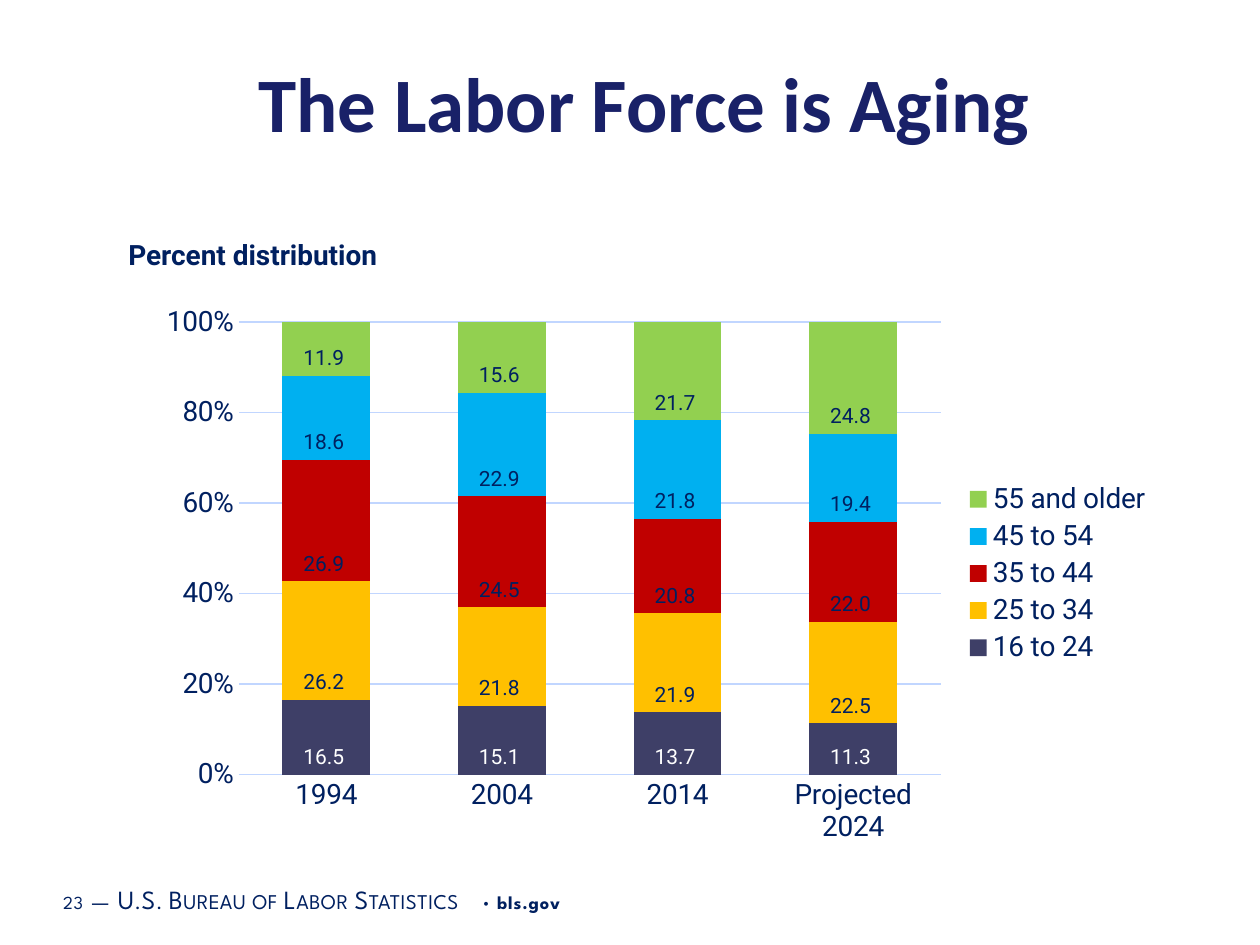
"""Build the slide on the aging labor force with its stacked column chart."""
from dataclasses import dataclass

import lxml.etree
import pptx
import pptx.chart.data
import pptx.dml.color
import pptx.enum.chart
import pptx.enum.text
import pptx.oxml
import pptx.oxml.ns
import pptx.util

SCALE = 914400 / 126


@dataclass(frozen=True)
class Theme:
    navy: str = "002060"
    title: str = "192168"
    grid: str = "C1D6FF"
    white: str = "FFFFFF"
    head: str = "Calibri"
    body: str = "Roboto"
    foot: str = "League Spartan"
    big: float = 44
    mid: float = 16
    caps: float = 15
    label: float = 12
    small: float = 10.5


@dataclass(frozen=True)
class Box:
    left: int
    top: int
    width: int
    height: int

    def emu(self) -> list[int]:
        return [px(n) for n in (self.left, self.top, self.width, self.height)]


@dataclass(frozen=True)
class Group:
    name: str
    values: tuple[float, ...]
    fill: str
    ink: str = Theme.navy


@dataclass(frozen=True)
class Part:
    text: str
    size: float
    track: float = 0.5
    caps: bool = False
    bold: bool = False


THEME = Theme()
YEARS = ("1994", "2004", "2014", "Projected 2024")
GROUPS = (
    Group("16 to 24", (16.5, 15.1, 13.7, 11.3), "3E3F67", THEME.white),
    Group("25 to 34", (26.2, 21.8, 21.9, 22.5), "FFC000"),
    Group("35 to 44", (26.9, 24.5, 20.8, 22.0), "C00000"),
    Group("45 to 54", (18.6, 22.9, 21.8, 19.4), "00B0F0"),
    Group("55 and older", (11.9, 15.6, 21.7, 24.8), "92D050"),
)
FOOTER = (
    Part("23", THEME.small),
    Part(" ", THEME.mid),
    Part("—", THEME.caps, 0.3, caps=True),
    Part(" ", THEME.mid),
    Part("U.S. Bureau of Labor Statistics", THEME.caps, 0.3, caps=True),
    Part(" • ", THEME.small),
    Part("bls.gov", THEME.small, bold=True),
)


def px(count: int) -> int:
    return round(count * SCALE)


def rgb(code: str) -> pptx.dml.color.RGBColor:
    return pptx.dml.color.RGBColor.from_string(code)


def style(font, size: float, color: str = THEME.navy,
          face: str = THEME.body, bold: bool = False) -> None:
    font.size = pptx.util.Pt(size)
    font.name = face
    font.bold = bold
    font.color.rgb = rgb(color)


def write(para, text: str, *, track: float = 0, caps: bool = False, **form) -> None:
    run = para.add_run()
    run.text = text
    style(run.font, **form)
    props = run._r.get_or_add_rPr()
    if track:
        props.set("spc", str(round(track * 100)))
    if caps:
        props.set("cap", "small")


def add_box(slide, box: Box):
    frame = slide.shapes.add_textbox(*box.emu()).text_frame
    frame.word_wrap = True
    frame.vertical_anchor = pptx.enum.text.MSO_ANCHOR.MIDDLE
    return frame


def add_title(slide, box: Box, text: str) -> None:
    title = slide.shapes.title
    title.left, title.top, title.width, title.height = box.emu()
    title.text_frame.vertical_anchor = pptx.enum.text.MSO_ANCHOR.MIDDLE
    para = title.text_frame.paragraphs[0]
    para.alignment = pptx.enum.text.PP_ALIGN.CENTER
    write(para, text, size=THEME.big, color=THEME.title, face=THEME.head, bold=True)


def rule(line) -> None:
    line.color.rgb = rgb(THEME.grid)
    line.width = pptx.util.Pt(0.75)


def place_plot(chart, **shares: float) -> None:
    area = chart._chartSpace.find(".//" + pptx.oxml.ns.qn("c:plotArea"))
    for old in area.findall(pptx.oxml.ns.qn("c:layout")):
        area.remove(old)
    layout = lxml.etree.Element(pptx.oxml.ns.qn("c:layout"))
    manual = lxml.etree.SubElement(layout, pptx.oxml.ns.qn("c:manualLayout"))
    modes = {"layoutTarget": "inner", "xMode": "edge", "yMode": "edge"}
    for tag, value in (modes | shares).items():
        lxml.etree.SubElement(manual, pptx.oxml.ns.qn(f"c:{tag}"), val=str(value))
    area.insert(0, layout)


def paint(series, group: Group) -> None:
    series.format.fill.solid()
    series.format.fill.fore_color.rgb = rgb(group.fill)
    labels = series.data_labels
    labels.show_value = True
    labels.position = pptx.enum.chart.XL_LABEL_POSITION.INSIDE_BASE
    labels.number_format = "0.0_)"
    labels.number_format_is_linked = False
    style(labels.font, THEME.label, group.ink)


def add_chart(slide, box: Box) -> None:
    kinds = pptx.enum.chart
    data = pptx.chart.data.CategoryChartData(number_format="0.0_)")
    data.categories = YEARS
    for group in GROUPS:
        data.add_series(group.name, group.values)
    chart = slide.shapes.add_chart(
        kinds.XL_CHART_TYPE.COLUMN_STACKED_100, *box.emu(), data).chart
    style(chart.font, 10)
    chart.has_title = False
    chart.has_legend = True
    chart.legend.position = kinds.XL_LEGEND_POSITION.RIGHT
    chart.legend.include_in_layout = False
    style(chart.legend.font, THEME.mid)
    plot = chart.plots[0]
    plot.gap_width, plot.overlap = 100, 100
    plot.vary_by_categories = False
    for series, group in zip(plot.series, GROUPS):
        paint(series, group)
    for axis in (chart.category_axis, chart.value_axis):
        axis.major_tick_mark = axis.minor_tick_mark = kinds.XL_TICK_MARK.NONE
        style(axis.tick_labels.font, THEME.mid)
    rule(chart.category_axis.format.line)
    scale = chart.value_axis
    scale.major_unit = 0.2
    scale.tick_labels.number_format = "0%"
    scale.tick_labels.number_format_is_linked = False
    scale.format.line.fill.background()
    rule(scale.major_gridlines.format.line)
    place_plot(chart, x=0.09, y=0.05, w=0.69, h=0.81)


def main() -> None:
    deck = pptx.Presentation()
    deck.slide_width, deck.slide_height = px(1260), px(945)
    slide = deck.slides.add_slide(deck.slide_layouts[5])
    foot = add_box(slide, Box(54, 873, 798, 50))
    foot.margin_left = foot.margin_right = px(9)
    for part in FOOTER:
        write(foot.paragraphs[0], part.text, size=part.size, face=THEME.foot,
              track=part.track, caps=part.caps, bold=part.bold)
    add_title(slide, Box(106, 0, 1077, 204), "The Labor Force is Aging")
    add_chart(slide, Box(147, 294, 1018, 559))
    note = add_box(slide, Box(116, 231, 693, 47))
    write(note.paragraphs[0], "Percent distribution", size=THEME.mid, bold=True)
    deck.save("out.pptx")


if __name__ == "__main__":
    main()
